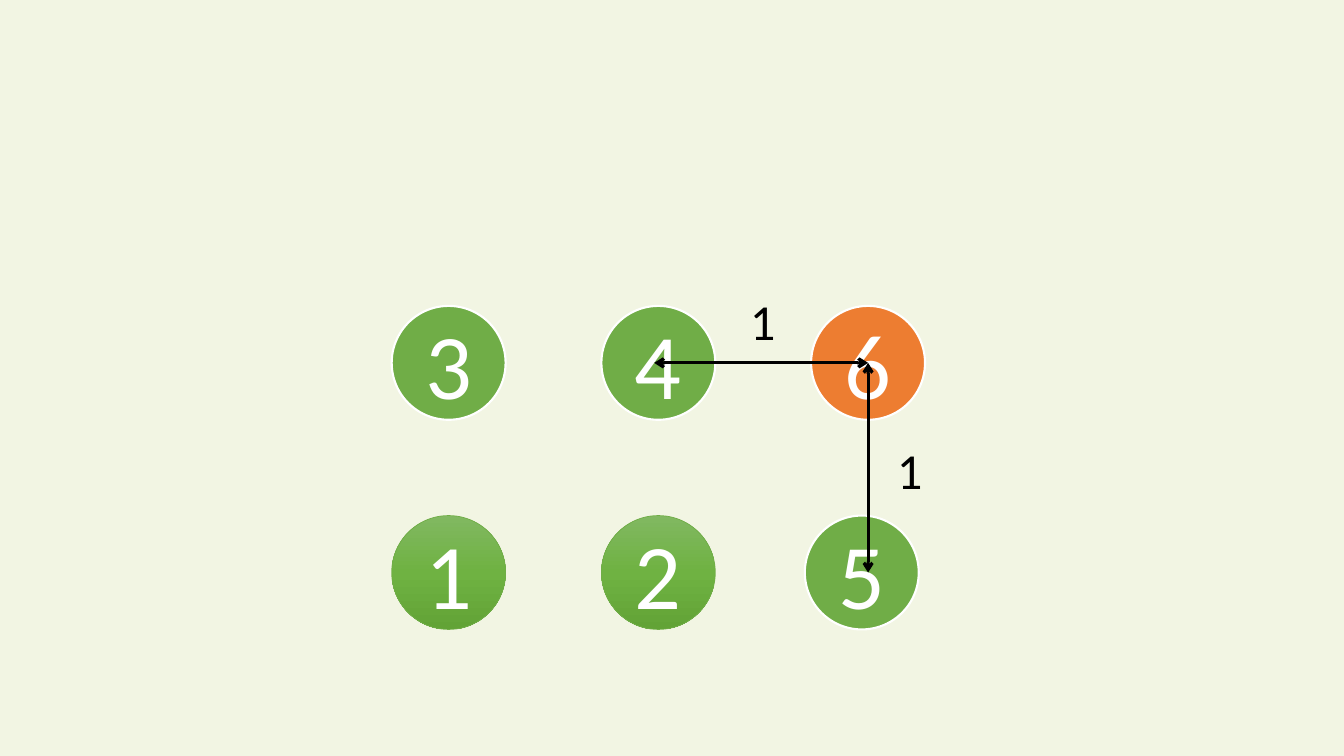
from copy import deepcopy

from lxml.etree import SubElement as Sub
from pptx import Presentation
from pptx.dml.color import RGBColor
from pptx.enum.shapes import MSO_CONNECTOR as Link, MSO_SHAPE as Kind
from pptx.enum.text import MSO_ANCHOR as Anchor, MSO_AUTO_SIZE as Fit, PP_ALIGN as Align
from pptx.oxml.ns import qn
from pptx.util import Inches, Pt

CREAM = RGBColor(0xF2, 0xF5, 0xE3)
GREEN = RGBColor(0x70, 0xAD, 0x47)
LIGHT = RGBColor(0x81, 0xB8, 0x61)
MID = RGBColor(0x6F, 0xB2, 0x42)
DEEP = RGBColor(0x62, 0xA3, 0x36)
ORANGE = RGBColor(0xED, 0x7D, 0x31)
WHITE = RGBColor(0xFF, 0xFF, 0xFF)
BLACK = RGBColor(0x00, 0x00, 0x00)
SHADES = ((0, LIGHT), (0.5, MID), (1, DEEP))


class Board:
    """Draws a graph whose nodes sit on a grid of columns and rows."""

    font = "Calibri"
    left, top, step, size = 4.45, 3.6, 2.08, 1.13

    def __init__(self, slide):
        self.slide = slide
        fill = slide.background.fill
        fill.solid()
        fill.fore_color.rgb = CREAM

    def spot(self, col, row):
        return Inches(self.left + col * self.step), Inches(self.top + row * self.step)

    def box(self, col, row, wide, high):
        x, y = self.spot(col, row)
        wide, high = Inches(wide), Inches(high)
        return x - wide // 2, y - high // 2, wide, high

    def text(self, frame, words, size, color):
        para = frame.paragraphs[0]
        para.text = words
        para.font.name = self.font
        para.font.size = Pt(size)
        para.font.color.rgb = color
        return para

    def shade(self, shape):
        fill = shape.fill
        fill.gradient()
        fill.gradient_angle = 270
        stops = shape.element.spPr.find(qn("a:gradFill")).find(qn("a:gsLst"))
        stops.append(deepcopy(stops[0]))
        for stop, (place, color) in zip(fill.gradient_stops, SHADES):
            stop.position = place
            stop.color.rgb = color

    def node(self, words, col, row, color=None):
        shape = self.slide.shapes.add_shape(
            Kind.OVAL, *self.box(col, row, self.size, self.size))
        shape.shadow.inherit = False
        if color:
            shape.fill.solid()
            shape.fill.fore_color.rgb = color
        else:
            self.shade(shape)
        shape.line.color.rgb = WHITE if color else GREEN
        shape.line.width = Pt(1.5 if color else 0.5)
        shape.text_frame.vertical_anchor = Anchor.MIDDLE
        self.text(shape.text_frame, words, 66, WHITE).alignment = Align.CENTER

    def edge(self, start, end):
        link = self.slide.shapes.add_connector(
            Link.STRAIGHT, *self.spot(*start), *self.spot(*end))
        link.line.color.rgb = BLACK
        link.line.width = Pt(2.25)
        props = link.element.spPr
        for tip in ("a:headEnd", "a:tailEnd"):
            Sub(props.find(qn("a:ln")), qn(tip), type="arrow")
        Sub(props, qn("a:effectLst"))

    def label(self, words, col, row):
        frame = self.slide.shapes.add_textbox(
            *self.box(col, row, 0.46, 0.71)).text_frame
        frame.word_wrap = False
        frame.auto_size = Fit.SHAPE_TO_FIT_TEXT
        self.text(frame, words, 36, BLACK)


def main():
    deck = Presentation()
    deck.slide_width, deck.slide_height = Inches(13.33), Inches(7.5)
    board = Board(deck.slides.add_slide(deck.slide_layouts[6]))
    for node in (("6", 2, 0, ORANGE), ("5", 1.97, 1, GREEN), ("4", 1, 0, GREEN),
                 ("3", 0, 0, GREEN), ("1", 0, 1), ("2", 1, 1)):
        board.node(*node)
    board.edge((0.98, 0), (2, 0))
    board.edge((2, 1), (2, 0))
    board.label("1", 1.5, -0.2)
    board.label("1", 2.2, 0.51)
    deck.save("out.pptx")


if __name__ == "__main__":
    main()
